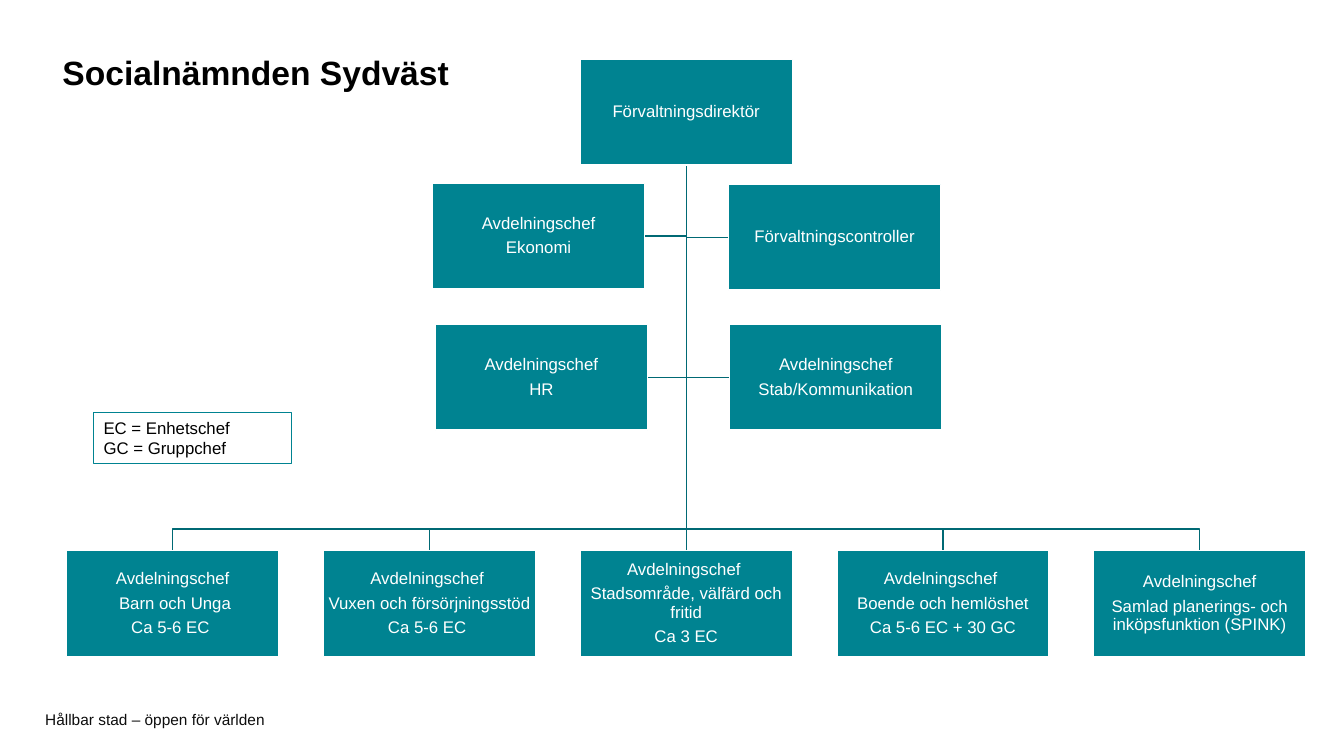
from lxml.etree import SubElement
from pptx import Presentation
from pptx.dml.color import RGBColor
from pptx.enum.shapes import MSO_CONNECTOR, MSO_SHAPE
from pptx.enum.text import MSO_ANCHOR, PP_ALIGN
from pptx.oxml.ns import qn
from pptx.util import Cm, Pt

TITLE = "Socialnämnden Sydväst"
FOOTER = "Hållbar stad – öppen för världen"
LEGEND = ["EC = Enhetschef", "GC = Gruppchef"]
DIRECTOR = ["Förvaltningsdirektör"]
STAFF = [  # left, top in cm, lines
    (10.9, 4.62, ["Avdelningschef", "Ekonomi"]),
    (18.36, 4.65, ["Förvaltningscontroller"]),
    (10.97, 8.18, ["Avdelningschef", "HR"]),
    (18.39, 8.18, ["Avdelningschef", "Stab/Kommunikation"]),
]
DEPARTMENTS = [
    ["Avdelningschef", " Barn och Unga", "Ca 5-6 EC "],
    ["Avdelningschef ", "Vuxen och försörjningsstöd", "Ca 5-6 EC "],
    ["Avdelningschef ", "Stadsområde, välfärd och fritid", "Ca 3 EC"],
    ["Avdelningschef ", "Boende och hemlöshet", "Ca 5-6 EC + 30 GC"],
    ["Avdelningschef", "Samlad planerings- och inköpsfunktion (SPINK)"],
]

COLORS = {"box": "008391", "link": "006974", "white": "FFFFFF",
          "black": "000000", "footer": "0D0D0D"}
FONT = "Arial"
BOX_W, BOX_H = 5.35, 2.66
DEPT_LEFT, DEPT_TOP, DEPT_PITCH = 1.68, 13.88, 6.47
DIRECTOR_LEFT, DIRECTOR_TOP = DEPT_LEFT + 2 * DEPT_PITCH, 1.5
TRUNK_X = DIRECTOR_LEFT + BOX_W / 2
TRUNK_TOP = DIRECTOR_TOP + BOX_H
BUS_Y = 13.33


def color(name):
    return RGBColor.from_string(COLORS[name])


def write(frame, lines, size, ink, bold=False, align=PP_ALIGN.LEFT,
          anchor=MSO_ANCHOR.TOP, margin=None, spacing=None, after=0):
    frame.word_wrap = True
    frame.vertical_anchor = anchor
    if margin is not None:
        frame.margin_left = frame.margin_right = Cm(margin)
        frame.margin_top = frame.margin_bottom = Cm(margin)
    for i, line in enumerate(lines):
        paragraph = frame.add_paragraph() if i else frame.paragraphs[0]
        paragraph.alignment = align
        paragraph.space_after = Pt(after)
        if spacing:
            paragraph.line_spacing = spacing
        run = paragraph.add_run()
        run.text = line
        run.font.name, run.font.size, run.font.bold = FONT, Pt(size), bold
        run.font.color.rgb = color(ink)


def add_link(shapes, points):
    """Draw a line through points given in cm, bent where there are more than two."""
    points = [(Cm(x), Cm(y)) for x, y in points]
    if len(points) == 2:
        link = shapes.add_connector(MSO_CONNECTOR.STRAIGHT, *points[0], *points[1])
        SubElement(link._element.spPr, qn("a:effectLst"))
    else:
        builder = shapes.build_freeform(*points[0])
        builder.add_line_segments(points[1:], close=False)
        link = builder.convert_to_shape()
        link.fill.background()
        link.shadow.inherit = False
    link.line.color.rgb = color("link")
    link.line.width = Pt(1)


def add_box(shapes, left, top, lines):
    box = shapes.add_shape(MSO_SHAPE.RECTANGLE, Cm(left), Cm(top), Cm(BOX_W), Cm(BOX_H))
    box.shadow.inherit = False
    box.fill.solid()
    box.fill.fore_color.rgb = color("box")
    box.line.color.rgb = color("white")
    box.line.width = Pt(1)
    write(box.text_frame, lines, 12, "white", align=PP_ALIGN.CENTER,
          anchor=MSO_ANCHOR.MIDDLE, margin=0.02, spacing=0.9, after=4.7)


def main():
    prs = Presentation()
    prs.slide_width, prs.slide_height = Cm(33.87), Cm(19.05)
    slide = prs.slides.add_slide(prs.slide_layouts[5])
    shapes = slide.shapes

    title = shapes.title
    title.left, title.top, title.width, title.height = Cm(1.32), Cm(1.19), Cm(11.63), Cm(1.27)
    write(title.text_frame, [TITLE], 24, "black", bold=True)

    footer = shapes.add_textbox(Cm(1.14), Cm(17.93), Cm(24), Cm(0.41))
    write(footer.text_frame, [FOOTER], 11, "footer", anchor=MSO_ANCHOR.MIDDLE, margin=0)

    departments = [(DEPT_LEFT + i * DEPT_PITCH, DEPT_TOP, lines)
                   for i, lines in enumerate(DEPARTMENTS)]
    start = (TRUNK_X, TRUNK_TOP)
    for left, top, _ in STAFF:
        middle = top + BOX_H / 2
        near_edge = left if left > TRUNK_X else left + BOX_W
        add_link(shapes, [start, (TRUNK_X, middle), (near_edge, middle)])
    for i, (left, top, _) in enumerate(departments):
        center = left + BOX_W / 2
        on_trunk = i == len(departments) // 2
        bend = [] if on_trunk else [(TRUNK_X, BUS_Y), (center, BUS_Y)]
        add_link(shapes, [start, *bend, (center, top)])

    director = (DIRECTOR_LEFT, DIRECTOR_TOP, DIRECTOR)
    for left, top, lines in [director, *departments, *STAFF]:
        add_box(shapes, left, top, lines)

    legend = shapes.add_shape(MSO_SHAPE.RECTANGLE, Cm(2.36), Cm(10.4), Cm(4.98), Cm(1.28))
    legend.shadow.inherit = False
    legend.fill.background()
    legend.line.color.rgb = color("box")
    legend.line.width = Pt(0.75)
    write(legend.text_frame, LEGEND, 12, "black")

    prs.save("out.pptx")


if __name__ == "__main__":
    main()
